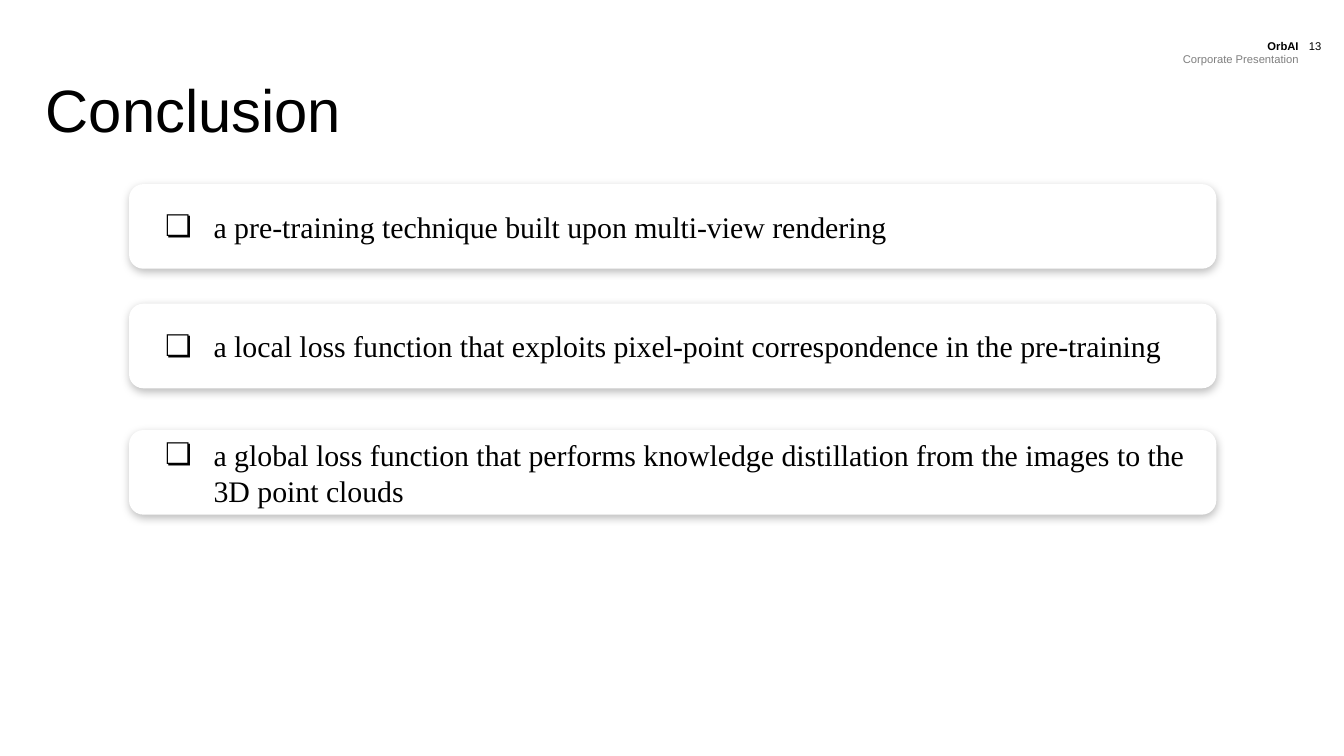
from typing import NamedTuple

from lxml import etree
from pptx import Presentation
from pptx import util as u
from pptx.dml.color import RGBColor
from pptx.enum import shapes, text
from pptx.oxml import ns, parse_xml

BLACK, GREY, WHITE = "000000", "7F7F7F", "FFFFFF"
SLIDE_WIDTH = 10
SLIDE_HEIGHT = SLIDE_WIDTH * 9 / 16
CARD_LEFT, CARD_WIDTH, CARD_HEIGHT = 0.96, 8.09, 0.63


class Card(NamedTuple):
    top: float
    label: str


class HeaderBox(NamedTuple):
    left: float
    width: float
    height: float
    lines: list[tuple[str, str, bool]]


CARDS = [
    Card(1.37, "a pre-training technique built upon multi-view rendering"),
    Card(2.26, "a local loss function that exploits pixel-point correspondence in the pre-training"),
    Card(3.2, "a global loss function that performs knowledge distillation "
              "from the images to the 3D point clouds"),
]
HEADERS = [
    HeaderBox(8.27, 1.49, 0.3,
              [("OrbAI", BLACK, True), ("Corporate Presentation", GREY, False)]),
    HeaderBox(9.58, 0.35, 0.2, [("13", BLACK, False)]),
]


def rgb(value: str) -> RGBColor:
    return RGBColor.from_string(value)


def style(p, name: str, size: float, color: str, bold: bool = False) -> None:
    for r in p.runs:
        r.font.name = name
        r.font.size = u.Pt(size)
        r.font.bold = bold
        r.font.color.rgb = rgb(color)


def set_margins(tf, margin: float) -> None:
    tf.margin_left = tf.margin_right = u.Inches(margin)
    tf.margin_top = tf.margin_bottom = u.Inches(margin)


def add_title(s, label: str) -> None:
    sp = s.shapes.title
    sp.left, sp.top = u.Inches(0.34), u.Inches(0.49)
    sp.width, sp.height = u.Inches(9.32), u.Inches(0.63)
    tf = sp.text_frame
    tf.text = label
    tf.auto_size = text.MSO_AUTO_SIZE.NONE
    tf.vertical_anchor = text.MSO_ANCHOR.MIDDLE
    set_margins(tf, 0)
    p = tf.paragraphs[0]
    p.alignment = text.PP_ALIGN.LEFT
    style(p, "Arial", 32, BLACK)


def add_header(s, box: HeaderBox) -> None:
    sp = s.shapes.add_textbox(u.Inches(box.left), u.Inches(0.24),
                              u.Inches(box.width), u.Inches(box.height))
    tf = sp.text_frame
    tf.word_wrap = True
    tf.text = "\n".join(label for label, _, _ in box.lines)
    for p, (_, color, bold) in zip(tf.paragraphs, box.lines):
        p.alignment = text.PP_ALIGN.RIGHT
        style(p, "Arial", 6, color, bold)


def add_soft_shadow(sp) -> None:
    sp.shadow.inherit = False
    effects = sp._element.spPr.find(ns.qn("a:effectLst"))
    effects.append(parse_xml(
        f'<a:outerShdw {ns.nsdecls("a")} blurRad="{u.Pt(4.5)}" dist="{u.Pt(1.5)}" '
        f'dir="5400000" algn="t" rotWithShape="0"><a:srgbClr val="{BLACK}">'
        '<a:alpha val="25000"/></a:srgbClr></a:outerShdw>'))


def add_bullet(p, char: str) -> None:
    pPr = p._p.get_or_add_pPr()
    pPr.set("marL", str(u.Inches(0.5)))
    pPr.set("indent", str(u.Inches(-0.36)))
    color = etree.SubElement(pPr, ns.qn("a:buClr"))
    etree.SubElement(color, ns.qn("a:srgbClr"), val=BLACK)
    etree.SubElement(pPr, ns.qn("a:buFont"), typeface="Arial")
    etree.SubElement(pPr, ns.qn("a:buChar"), char=char)


def add_card(s, card: Card) -> None:
    sp = s.shapes.add_shape(shapes.MSO_SHAPE.ROUNDED_RECTANGLE,
                            u.Inches(CARD_LEFT), u.Inches(card.top),
                            u.Inches(CARD_WIDTH), u.Inches(CARD_HEIGHT))
    sp.adjustments[0] = 0.17
    sp.fill.solid()
    sp.fill.fore_color.rgb = rgb(WHITE)
    sp.line.fill.background()
    add_soft_shadow(sp)
    tf = sp.text_frame
    tf.word_wrap = True
    tf.vertical_anchor = text.MSO_ANCHOR.MIDDLE
    set_margins(tf, 0.1)
    tf.text = card.label
    p = tf.paragraphs[0]
    p.alignment = text.PP_ALIGN.LEFT
    add_bullet(p, "❏")
    style(p, "Times New Roman", 16, BLACK)


def main() -> None:
    prs = Presentation()
    prs.slide_width, prs.slide_height = u.Inches(SLIDE_WIDTH), u.Inches(SLIDE_HEIGHT)
    s = prs.slides.add_slide(prs.slide_layouts[5])
    add_title(s, "Conclusion")
    for box in HEADERS:
        add_header(s, box)
    for card in CARDS:
        add_card(s, card)
    prs.save("out.pptx")


if __name__ == "__main__":
    main()
